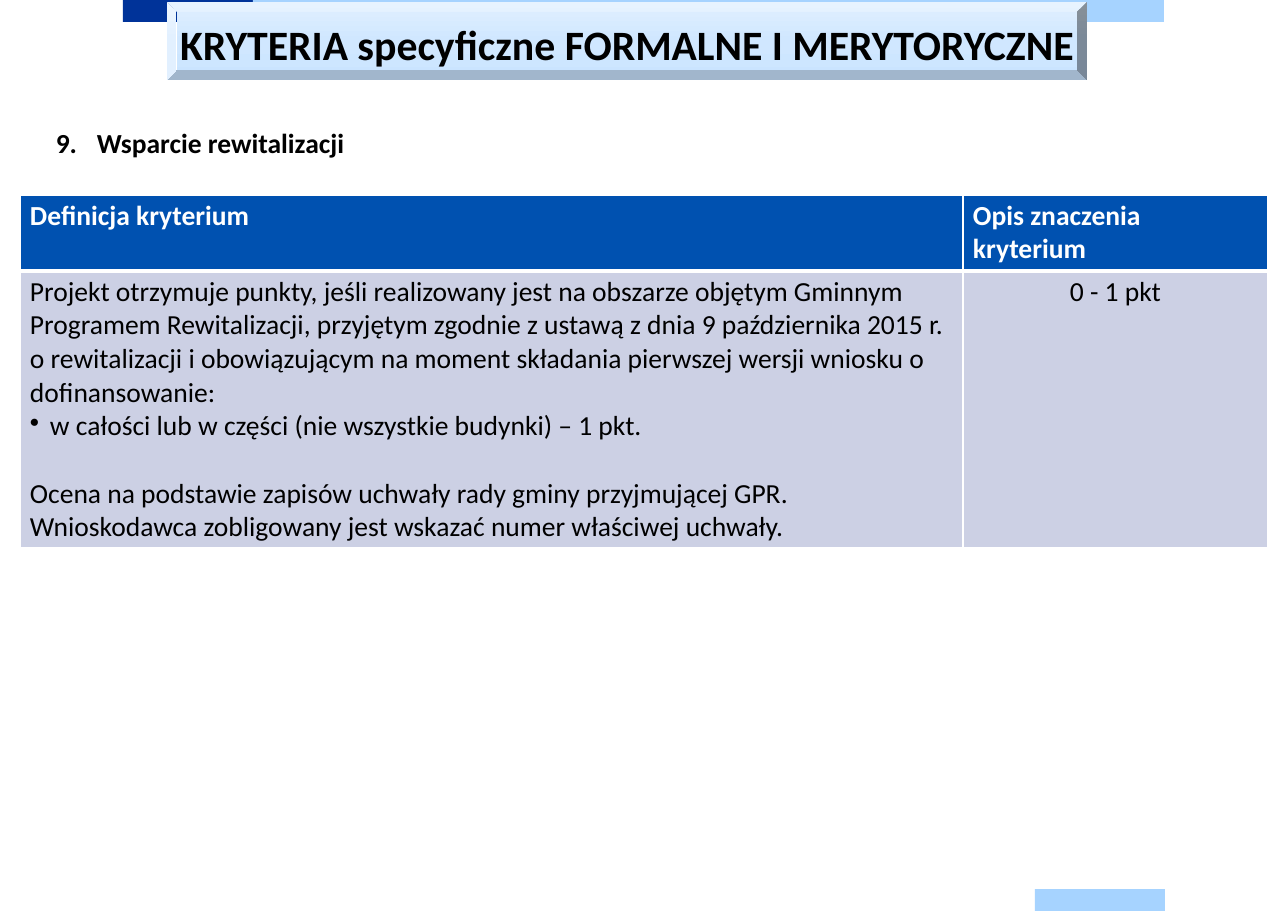
from copy import deepcopy

from lxml.etree import SubElement
from pptx import Presentation
from pptx.dml.color import RGBColor
from pptx.enum.shapes import MSO_SHAPE as Shape
from pptx.enum.text import MSO_ANCHOR as Anchor, PP_ALIGN as Align
from pptx.oxml.ns import qn
from pptx.util import Emu, Pt

SLIDE_SIZE = (1288, 911)
BARS = [
    ((123, 0, 130, 22), "003399"),
    ((253, 0, 911, 22), "A6D3FF"),
    ((1035, 889, 130, 22), "A6D3FF"),
]
TITLE = "KRYTERIA specyficzne FORMALNE I MERYTORYCZNE"
TITLE_BOX = (167, 2, 920, 78)
TITLE_GRADIENT = [(0, "E1F0FF"), (0.5, "D0E7FF"), (1, "CAE4FF")]
HEADING = "Wsparcie rewitalizacji"
HEADING_NUMBER = 9
HEADING_BOX = (45, 121, 1068, 44)

HEADERS = ["Definicja kryterium", "Opis znaczenia kryterium"]
DEFINITION = [
    "Projekt otrzymuje punkty, jeśli realizowany jest na obszarze objętym Gminnym "
    "Programem Rewitalizacji, przyjętym zgodnie z ustawą z dnia 9 października 2015 r. "
    "o rewitalizacji i obowiązującym na moment składania pierwszej wersji wniosku o "
    "dofinansowanie:",
    "w całości lub w części (nie wszystkie budynki) – 1 pkt.",
    "Ocena na podstawie zapisów uchwały rady gminy przyjmującej GPR. "
    "Wnioskodawca zobligowany jest wskazać numer właściwej uchwały.",
]
SCORE = ["0 - 1 pkt"]
COLUMNS = [943, 305]
ROWS = [76, 277]
TABLE_ORIGIN = (20, 195)


def px(length):
    return Emu(round(length * 914400 / 110.2))


def color(value):
    return RGBColor.from_string(value)


def set_font(paragraph, size=18, bold=False, value="000000"):
    font = paragraph.font
    font.name, font.size, font.bold = "Calibri", Pt(size), bold
    font.color.rgb = color(value)


def add_bullet(paragraph, indent, tag, **attributes):
    properties = paragraph._p.get_or_add_pPr()
    properties.set("marL", str(px(indent)))
    properties.set("indent", str(-px(indent)))
    SubElement(properties, qn(tag), attributes)


def add_plain_shape(slide, kind, box):
    shape = slide.shapes.add_shape(kind, *map(px, box))
    shape.shadow.inherit = False
    shape.line.fill.background()
    return shape


def add_title(slide):
    shape = add_plain_shape(slide, Shape.BEVEL, TITLE_BOX)
    fill = shape.fill
    fill.gradient()
    fill.gradient_angle = 270
    stop_list = shape._element.spPr.find(qn("a:gradFill")).find(qn("a:gsLst"))
    stop_list.insert(1, deepcopy(stop_list[0]))
    for stop, (position, value) in zip(fill.gradient_stops, TITLE_GRADIENT):
        stop.position = position
        stop.color.rgb = color(value)
    frame = shape.text_frame
    frame.word_wrap = False
    frame.vertical_anchor = Anchor.MIDDLE
    frame.margin_left = frame.margin_right = frame.margin_top = frame.margin_bottom = 0
    paragraph = frame.paragraphs[0]
    paragraph.text = TITLE
    paragraph.alignment = Align.CENTER
    paragraph.line_spacing = Pt(36)
    set_font(paragraph, 27.3, True)


def add_heading(slide):
    frame = slide.shapes.add_textbox(*map(px, HEADING_BOX)).text_frame
    frame.word_wrap = True
    paragraph = frame.paragraphs[0]
    paragraph.text = HEADING
    add_bullet(paragraph, 41, "a:buAutoNum", type="arabicPeriod", startAt=str(HEADING_NUMBER))
    set_font(paragraph, bold=True)


def set_borders(cell, bottom):
    properties = cell._tc.get_or_add_tcPr()
    widths = {"a:lnL": 1, "a:lnR": 1, "a:lnT": 1, "a:lnB": bottom}
    for index, (tag, width) in enumerate(widths.items()):
        line = SubElement(properties, qn(tag), w=str(Pt(width)))
        SubElement(SubElement(line, qn("a:solidFill")), qn("a:srgbClr"), val="FFFFFF")
        properties.insert(index, line)


def fill_cell(cell, texts, header):
    cell.fill.solid()
    cell.fill.fore_color.rgb = color("0051B0" if header else "CCD0E4")
    cell.margin_left = cell.margin_right = px(10)
    cell.margin_top = cell.margin_bottom = px(4)
    set_borders(cell, 3 if header else 1)
    frame = cell.text_frame
    frame.text = "\n".join(texts)
    for paragraph in frame.paragraphs:
        if paragraph.text == DEFINITION[1]:
            add_bullet(paragraph, 20, "a:buChar", char="•")
        elif paragraph.text == DEFINITION[2]:
            paragraph.space_before = Pt(22)
        elif texts is SCORE:
            paragraph.alignment = Align.CENTER
        set_font(paragraph, bold=header, value="FFFFFF" if header else "000000")


def add_criteria_table(slide):
    box = (*TABLE_ORIGIN, sum(COLUMNS), sum(ROWS))
    table = slide.shapes.add_table(len(ROWS), len(COLUMNS), *map(px, box)).table
    for column, width in zip(table.columns, COLUMNS):
        column.width = px(width)
    contents = [[[header] for header in HEADERS], [DEFINITION, SCORE]]
    for index, (row, height) in enumerate(zip(table.rows, ROWS)):
        row.height = px(height)
        for cell, texts in zip(row.cells, contents[index]):
            fill_cell(cell, texts, index == 0)


def main():
    presentation = Presentation()
    presentation.slide_width, presentation.slide_height = map(px, SLIDE_SIZE)
    slide = presentation.slides.add_slide(presentation.slide_layouts[6])
    for box, value in BARS:
        bar = add_plain_shape(slide, Shape.RECTANGLE, box)
        bar.fill.solid()
        bar.fill.fore_color.rgb = color(value)
    add_title(slide)
    add_heading(slide)
    add_criteria_table(slide)
    presentation.save("out.pptx")


if __name__ == "__main__":
    main()
